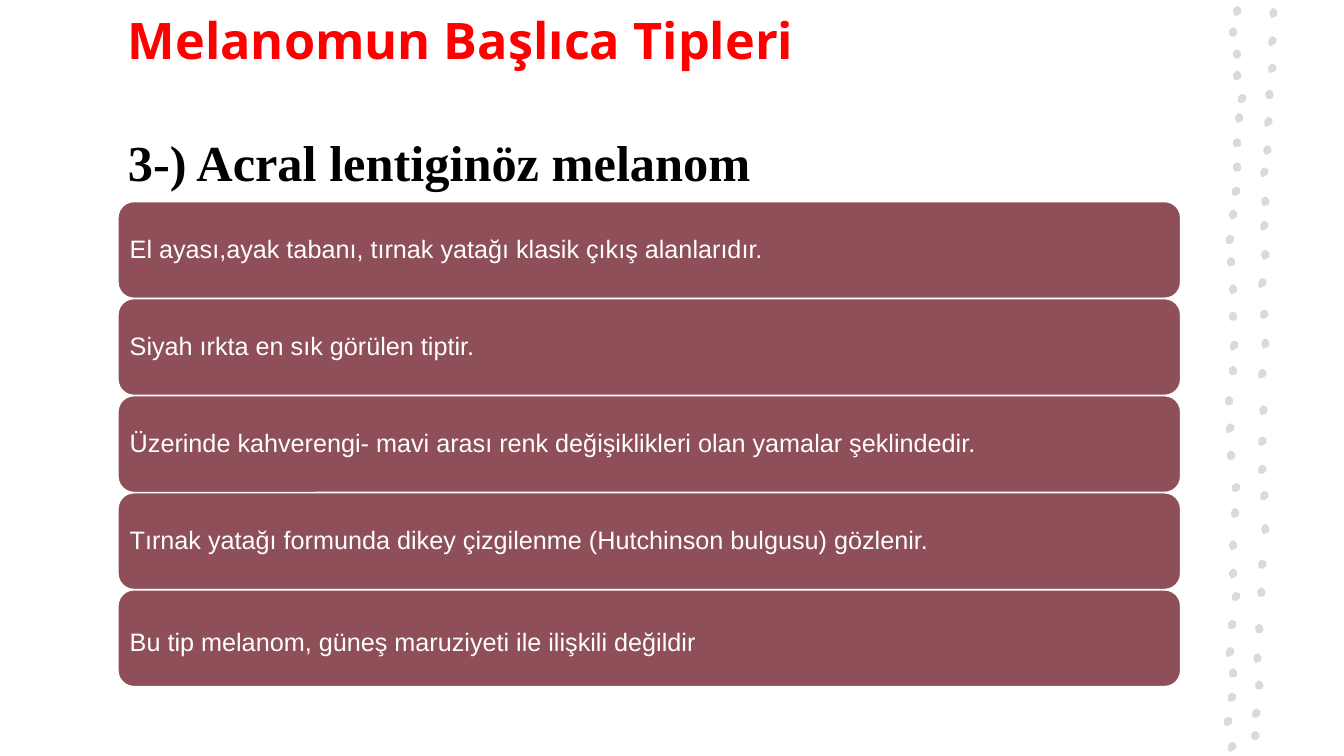
import pptx
import pptx.util
from lxml import etree
from pptx.dml.color import RGBColor
from pptx.enum.shapes import MSO_SHAPE
from pptx.enum.text import MSO_ANCHOR, PP_ALIGN
from pptx.util import Inches

RED = RGBColor(0xFF, 0x00, 0x00)
BLACK = RGBColor(0x00, 0x00, 0x00)
WHITE = RGBColor(0xFF, 0xFF, 0xFF)
MAROON = RGBColor(0x8F, 0x4F, 0x58)
SAND = RGBColor(0xE0, 0xD8, 0xD2)

LEFT, WIDTH = 1.17, 10.54
BAR_TOP, BAR_HEIGHT, BAR_PITCH = 2.0, 0.96, 0.963

FEATURES = [
    "El ayası,ayak tabanı, tırnak yatağı klasik çıkış alanlarıdır.",
    "Siyah ırkta en sık görülen tiptir.",
    "Üzerinde kahverengi- mavi arası renk değişiklikleri olan yamalar şeklindedir.",
    "Tırnak yatağı formunda dikey çizgilenme (Hutchinson bulgusu) gözlenir.",
    "Bu tip melanom, güneş maruziyeti ile ilişkili değildir",
]

# Pebble centres in inches, top to bottom
INNER_PEBBLES = [
    (12.27, 0.11), (12.23, 0.32), (12.27, 0.54), (12.27, 0.75), (12.32, 0.98),
    (12.29, 1.17), (12.27, 1.42), (12.27, 1.66), (12.26, 1.9), (12.23, 2.13),
    (12.2, 2.38), (12.21, 2.6), (12.23, 2.87), (12.23, 3.14), (12.24, 3.43),
    (12.23, 3.68), (12.19, 3.98), (12.2, 4.25), (12.21, 4.52), (12.26, 4.84),
    (12.25, 5.09), (12.23, 5.41), (12.23, 5.69), (12.26, 5.92), (12.22, 6.2),
    (12.2, 6.47), (12.23, 6.68), (12.22, 6.92), (12.18, 7.16), (12.22, 7.41),
]
OUTER_PEBBLES = [
    (12.63, 0.13), (12.62, 0.41), (12.62, 0.68), (12.59, 0.94), (12.58, 1.21),
    (12.57, 1.49), (12.54, 1.71), (12.55, 2.0), (12.54, 2.24), (12.55, 2.53),
    (12.52, 2.81), (12.54, 3.12), (12.55, 3.41), (12.52, 3.71), (12.53, 4.07),
    (12.52, 4.38), (12.52, 4.66), (12.54, 4.92), (12.55, 5.25), (12.52, 5.6),
    (12.51, 5.88), (12.49, 6.24), (12.47, 6.53), (12.49, 6.8), (12.46, 7.08),
    (12.45, 7.3),
]
# Pebble outline in hundredths of an inch around its centre
PEBBLE_OUTLINE = [
    (4, -1), (3.8, 1), (2.5, 3), (0.5, 4.4), (-2, 4.5), (-3.5, 3),
    (-4, 1), (-3.6, -1.5), (-2, -3.8), (0, -4.6), (2.2, -4.2), (3.5, -2.8),
]


def add_pebble(slide, x, y):
    points = [(x * 100 + dx, y * 100 + dy) for dx, dy in PEBBLE_OUTLINE]
    outline = slide.shapes.build_freeform(*points[0], scale=Inches(0.01))
    outline.add_line_segments(points[1:], close=True)
    pebble = outline.convert_to_shape()
    pebble.shadow.inherit = False
    pebble.fill.solid()
    pebble.fill.fore_color.rgb = SAND
    pebble.line.fill.background()


def write(paragraph, text, font_name, size, color, bold=False):
    paragraph.text = text
    paragraph.alignment = PP_ALIGN.LEFT
    font = paragraph.runs[0].font
    font.name = font_name
    font.size = pptx.util.Pt(size)
    font.color.rgb = color
    font.bold = bold


def add_heading(slide):
    heading = slide.shapes.add_textbox(
        Inches(LEFT), Inches(0.55), Inches(WIDTH), Inches(1.45)).text_frame
    heading.word_wrap = True
    heading.vertical_anchor = MSO_ANCHOR.BOTTOM
    heading.margin_bottom = Inches(0.1)
    topic = heading.paragraphs[0]
    write(topic, "Melanomun Başlıca Tipleri", "Open Sans", 36, RED, bold=True)
    topic.space_after = pptx.util.Pt(44)
    write(heading.add_paragraph(), "3-) Acral lentiginöz melanom",
          "Times New Roman", 36, BLACK, bold=True)


def add_feature_bar(slide, top, text, drop=0):
    """Add a rounded bar; drop lowers its text by that many inches."""
    bar = slide.shapes.add_shape(
        MSO_SHAPE.ROUNDED_RECTANGLE,
        Inches(LEFT), Inches(top), Inches(WIDTH), Inches(BAR_HEIGHT))
    bar.shadow.inherit = False
    bar.fill.solid()
    bar.fill.fore_color.rgb = MAROON
    bar.line.color.rgb = WHITE
    bar.line.width = pptx.util.Pt(1)
    frame = bar.text_frame
    frame.word_wrap = True
    frame.vertical_anchor = MSO_ANCHOR.MIDDLE
    frame.margin_left = frame.margin_right = Inches(0.07)
    frame.margin_top = Inches(0.07 + 2 * drop)
    frame.margin_bottom = Inches(0.07)
    write(frame.paragraphs[0], text, "Arial", 18, WHITE)
    frame.paragraphs[0].line_spacing = 0.9


def main():
    deck = pptx.Presentation()
    deck.slide_width, deck.slide_height = Inches(13.33), Inches(7.5)
    slide = deck.slides.add_slide(deck.slide_layouts[6])
    for x, y in INNER_PEBBLES + OUTER_PEBBLES:
        add_pebble(slide, x, y)
    add_heading(slide)
    for row, feature in enumerate(FEATURES):
        is_last = row == len(FEATURES) - 1
        add_feature_bar(slide, BAR_TOP + row * BAR_PITCH, feature,
                        drop=0.05 if is_last else 0)
    deck.save("out.pptx")


if __name__ == "__main__":
    main()
